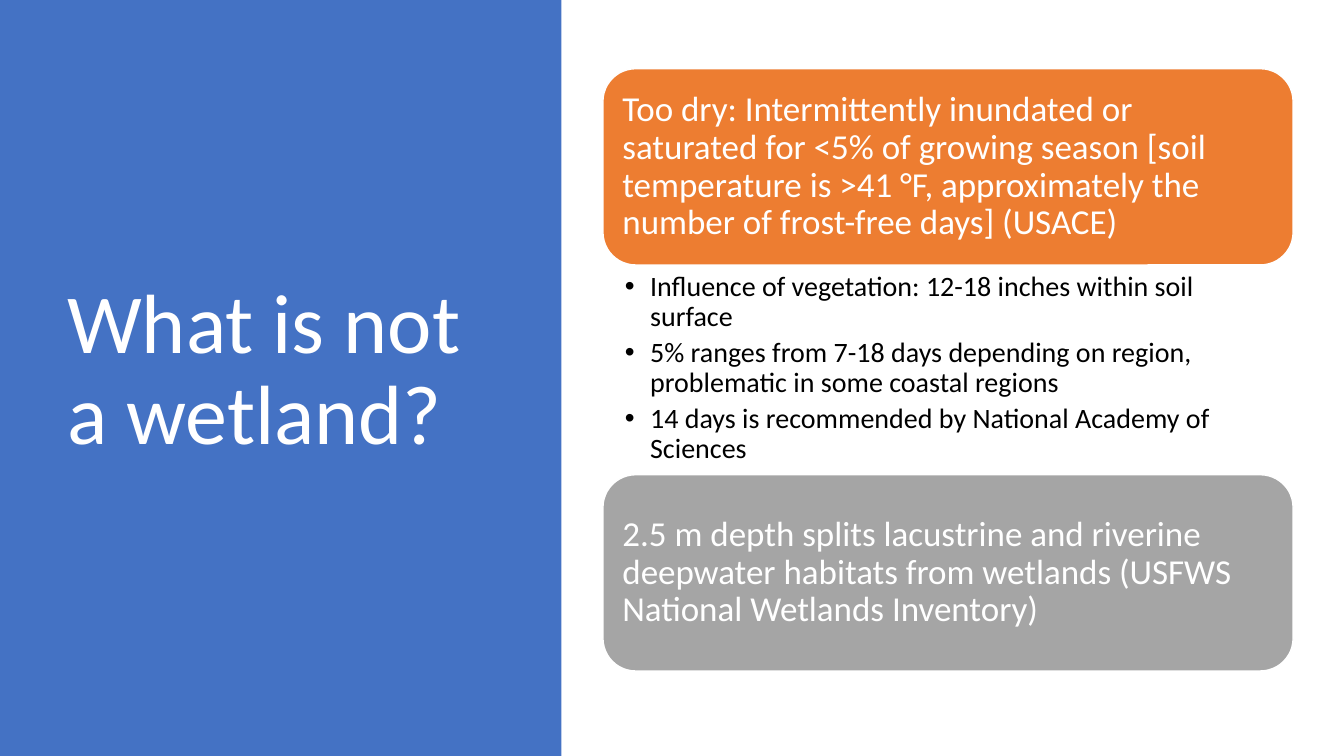
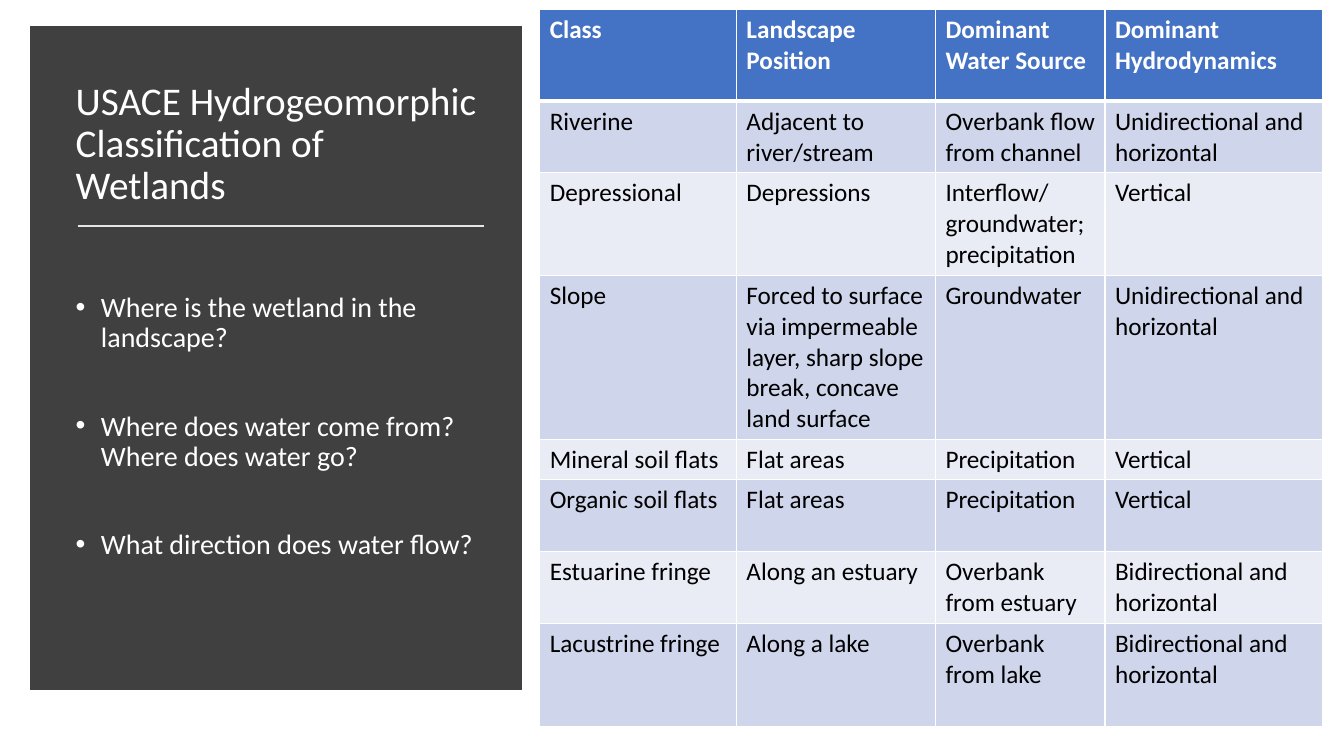
from dataclasses import dataclass
from itertools import product

import lxml.etree
import pptx
import pptx.dml.color
import pptx.enum.shapes
import pptx.enum.text
import pptx.oxml
import pptx.oxml.ns
import pptx.util

Pt = pptx.util.Pt
RGBColor = pptx.dml.color.RGBColor
MIDDLE = pptx.enum.text.MSO_ANCHOR.MIDDLE
TOP = pptx.enum.text.MSO_ANCHOR.TOP
LEFT = pptx.enum.text.PP_ALIGN.LEFT
RECTANGLE = pptx.enum.shapes.MSO_SHAPE.RECTANGLE
ROUNDED = pptx.enum.shapes.MSO_SHAPE.ROUNDED_RECTANGLE

FONT = "Calibri"
WHITE = RGBColor(0xFF, 0xFF, 0xFF)
BLACK = RGBColor(0x00, 0x00, 0x00)
BLUE = RGBColor(0x44, 0x72, 0xC4)
ORANGE = RGBColor(0xED, 0x7D, 0x31)
GRAY = RGBColor(0xA5, 0xA5, 0xA5)
CHARCOAL = RGBColor(0x40, 0x40, 0x40)
RULE_GRAY = RGBColor(0xE7, 0xE6, 0xE6)
BAND_DARK = RGBColor(0xCF, 0xD5, 0xEA)
BAND_LIGHT = RGBColor(0xE9, 0xEB, 0xF5)

PAGE_WIDTH, PAGE_HEIGHT = 960, 540
BULLET_INDENT = 18
SIDE_INSET, END_INSET = 7.2, 3.6


@dataclass(frozen=True)
class Frame:
    """Position and size in points."""
    left: float
    top: float
    width: float
    height: float

    def lengths(self) -> tuple:
        return tuple(Pt(n) for n in (self.left, self.top, self.width, self.height))


@dataclass(frozen=True)
class TextStyle:
    size: float
    color: RGBColor = WHITE
    bold: bool = False
    line_spacing: float = 0.9
    space_after: float = 0
    bullet: bool = False


@dataclass(frozen=True)
class Card:
    top: float
    fill: RGBColor
    text: str


CARD_LEFT, CARD_WIDTH, CARD_HEIGHT = 430.7, 493, 140.2
CARDS = (
    Card(49.1, ORANGE,
         "Too dry: Intermittently inundated or saturated for <5% of growing season "
         "[soil temperature is >41 °F, approximately the number of frost-free days] (USACE)"),
    Card(339.1, GRAY,
         "2.5 m depth splits lacustrine and riverine deepwater habitats from wetlands "
         "(USFWS National Wetlands Inventory)"),
)
DRY_DETAILS = (
    "Influence of vegetation: 12-18 inches within soil surface",
    "5% ranges from 7-18 days depending on region, problematic in some coastal regions",
    "14 days is recommended by National Academy of Sciences",
)
QUESTIONS = (
    "Where is the wetland in the landscape?",
    "Where does water come from? Where does water go?",
    "What direction does water flow?",
)
CLASSES = (
    ("Class", "Landscape Position", "Dominant Water Source", "Dominant Hydrodynamics"),
    ("Riverine", "Adjacent to river/stream", "Overbank flow from channel",
     "Unidirectional and horizontal"),
    ("Depressional", "Depressions", "Interflow/\ngroundwater; precipitation", "Vertical"),
    ("Slope", "Forced to surface via impermeable layer, sharp slope break, "
     "concave land surface", "Groundwater", "Unidirectional and horizontal"),
    ("Mineral soil flats", "Flat areas", "Precipitation", "Vertical"),
    ("Organic soil flats", "Flat areas", "Precipitation", "Vertical"),
    ("Estuarine fringe", "Along an estuary", "Overbank from estuary",
     "Bidirectional and horizontal"),
    ("Lacustrine fringe", "Along a lake", "Overbank from lake",
     "Bidirectional and horizontal"),
)
COLUMN_WIDTHS = (140.5, 142.2, 121.1, 155.7)
ROW_HEIGHTS = (65.5, 51, 73.5, 117, 29, 51.5, 51, 73.5)


def write_text(text_frame, text: str, style: TextStyle) -> None:
    text_frame.word_wrap = True
    text_frame.text = text
    for para in text_frame.paragraphs:
        para.alignment = LEFT
        para.line_spacing = style.line_spacing
        para.space_after = Pt(style.space_after)
        if style.bullet:
            add_bullet(para)
        for span in para.runs:
            span.font.name = FONT
            span.font.size = Pt(style.size)
            span.font.bold = style.bold
            span.font.color.rgb = style.color


def add_bullet(para) -> None:
    properties = para._p.get_or_add_pPr()
    properties.set("marL", str(Pt(BULLET_INDENT)))
    properties.set("indent", str(-Pt(BULLET_INDENT)))
    font = lxml.etree.SubElement(properties, pptx.oxml.ns.qn("a:buFont"))
    font.set("typeface", "Arial")
    mark = lxml.etree.SubElement(properties, pptx.oxml.ns.qn("a:buChar"))
    mark.set("char", "•")


def set_insets(target, left: float, top: float, right: float, bottom: float) -> None:
    """Set the margins of a text frame or a table cell."""
    target.margin_left, target.margin_top = Pt(left), Pt(top)
    target.margin_right, target.margin_bottom = Pt(right), Pt(bottom)


def add_text(page, frame: Frame, text: str, style: TextStyle, anchor=TOP,
             insets: tuple = (SIDE_INSET, END_INSET, SIDE_INSET, END_INSET)) -> None:
    box = page.shapes.add_textbox(*frame.lengths())
    box.text_frame.vertical_anchor = anchor
    set_insets(box.text_frame, *insets)
    write_text(box.text_frame, text, style)


def add_title(page, frame: Frame, text: str, size: float) -> None:
    add_text(page, frame, text, TextStyle(size), MIDDLE)


def add_block(page, kind, frame: Frame, fill: RGBColor,
              line: RGBColor | None = None, line_width: float = 1):
    """Add a filled shape, with a square-cornered outline if a line colour is given."""
    block = page.shapes.add_shape(kind, *frame.lengths())
    block.shadow.inherit = False
    block.fill.solid()
    block.fill.fore_color.rgb = fill
    if line is None:
        block.line.fill.background()
    else:
        block.line.color.rgb = line
        block.line.width = Pt(line_width)
        miter = lxml.etree.SubElement(block.line._get_or_add_ln(),
                                      pptx.oxml.ns.qn("a:miter"))
        miter.set("lim", "800000")
    return block


def add_card(page, card: Card) -> None:
    frame = Frame(CARD_LEFT, card.top, CARD_WIDTH, CARD_HEIGHT)
    block = add_block(page, ROUNDED, frame, card.fill, WHITE)
    block.text_frame.vertical_anchor = MIDDLE
    set_insets(block.text_frame, *[SIDE_INSET] * 4)
    write_text(block.text_frame, card.text, TextStyle(25))


def add_rule(page, left: float, right: float, top: float) -> None:
    rule = page.shapes.add_connector(pptx.enum.shapes.MSO_CONNECTOR.STRAIGHT,
                                     Pt(left), Pt(top), Pt(right), Pt(top))
    rule.line.color.rgb = RULE_GRAY
    rule.line.width = Pt(1.75)
    lxml.etree.SubElement(rule._element.spPr, pptx.oxml.ns.qn("a:effectLst"))


def set_borders(cell, top: float, bottom: float) -> None:
    """Draw white borders; the given widths apply to the top and bottom edges."""
    properties = cell._tc.get_or_add_tcPr()
    for index, (side, width) in enumerate(zip("LRTB", (1, 1, top, bottom))):
        border = pptx.oxml.parse_xml(
            f'<a:ln{side} {pptx.oxml.ns.nsdecls("a")} w="{Pt(width)}"><a:solidFill>'
            f'<a:srgbClr val="{WHITE}"/></a:solidFill></a:ln{side}>')
        properties.insert(index, border)


def add_class_table(page, left: float, top: float) -> None:
    frame = Frame(left, top, sum(COLUMN_WIDTHS), sum(ROW_HEIGHTS))
    table = page.shapes.add_table(len(CLASSES), len(COLUMN_WIDTHS),
                                  *frame.lengths()).table
    table.horz_banding = False
    for column, width in zip(table.columns, COLUMN_WIDTHS):
        column.width = Pt(width)
    for row, height in zip(table.rows, ROW_HEIGHTS):
        row.height = Pt(height)
    for row, column in product(range(len(CLASSES)), range(len(COLUMN_WIDTHS))):
        cell = table.cell(row, column)
        header = row == 0
        cell.fill.solid()
        cell.fill.fore_color.rgb = BLUE if header else (BAND_LIGHT, BAND_DARK)[row % 2]
        set_borders(cell, 3 if row == 1 else 1, 3 if header else 1)
        set_insets(cell, SIDE_INSET, END_INSET, SIDE_INSET, END_INSET)
        write_text(cell.text_frame, CLASSES[row][column],
                   TextStyle(18, WHITE if header else BLACK, header, 1))


def build_not_wetland(page) -> None:
    add_block(page, RECTANGLE, Frame(0, 0, 401, PAGE_HEIGHT), BLUE)
    add_title(page, Frame(41, 49, 299.5, 433.5), "What is not a wetland?", 60)
    for card in CARDS:
        add_card(page, card)
    details_top = CARDS[0].top + CARD_HEIGHT + 3
    add_text(page, Frame(CARD_LEFT, details_top, CARD_WIDTH, CARDS[1].top - details_top),
             "\n".join(DRY_DETAILS),
             TextStyle(20, BLACK, space_after=4, bullet=True),
             insets=(15.7, 2, 14, 2))


def build_classification(page) -> None:
    text_left, text_width = 47, 301
    add_block(page, RECTANGLE, Frame(26.5, 23.7, 341.3, 464.1), CHARCOAL, CHARCOAL, 10)
    add_title(page, Frame(text_left, 50.5, text_width, 106),
              "USACE Hydrogeomorphic Classification of Wetlands", 28)
    add_rule(page, 55.5, 345.6, 161.4)
    add_text(page, Frame(text_left, 206, text_width, 297), "\n".join(QUESTIONS),
             TextStyle(20, space_after=41.5, bullet=True))
    add_class_table(page, 385.5, 6.8)


def main() -> None:
    deck = pptx.Presentation()
    deck.slide_width, deck.slide_height = Pt(PAGE_WIDTH), Pt(PAGE_HEIGHT)
    for build in (build_not_wetland, build_classification):
        build(deck.slides.add_slide(deck.slide_layouts[6]))
    deck.save("out.pptx")


if __name__ == "__main__":
    main()
